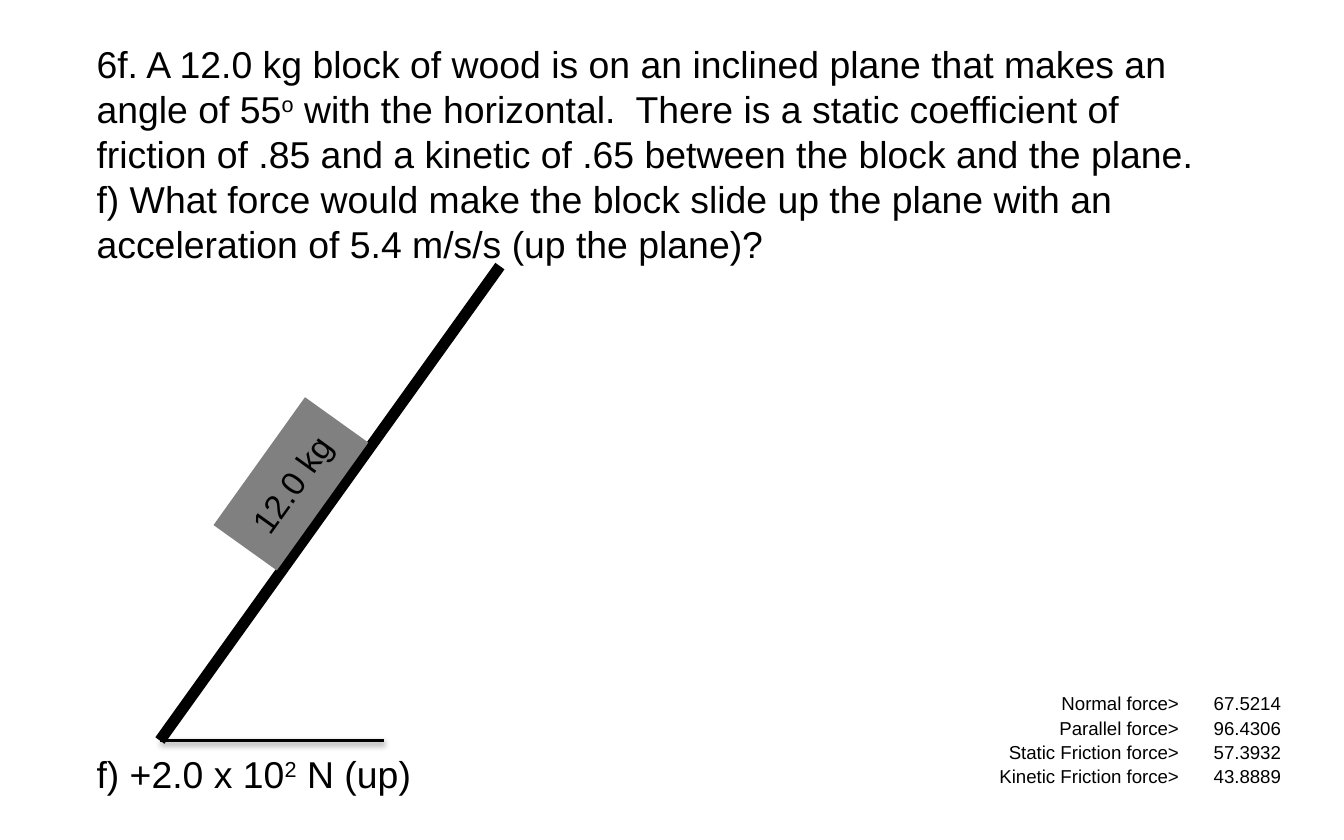
from dataclasses import dataclass

from lxml.etree import SubElement
from pptx import Presentation
from pptx.dml.color import RGBColor
from pptx.enum.shapes import MSO_CONNECTOR, MSO_SHAPE
from pptx.enum.text import MSO_ANCHOR, PP_ALIGN
from pptx.oxml.ns import qn
from pptx.util import Inches, Pt


@dataclass(frozen=True)
class Theme:
    """Colours, font and type sizes of the slide."""
    ink: RGBColor = RGBColor(0, 0, 0)
    wood: RGBColor = RGBColor(0x80, 0x80, 0x80)
    font: str = "Arial"
    body: int = 20
    label: int = 18
    small: int = 10


THEME = Theme()
PROBLEM = [
    ["6f. A 12.0 kg block of wood is on an inclined plane that makes an angle of 55",
     "o",
     " with the horizontal.  There is a static coefficient of friction of .85 "
     "and a kinetic of .65 between the block and the plane."],
    ["f) What force would make the block slide up the plane with an "
     "acceleration of 5.4 m/s/s (up the plane)?"],
]
ANSWER = [["f) +2.0 x 10", "2", " N (up)"]]
FORCES = [
    ("Normal force>", "67.5214"),
    ("Parallel force>", "96.4306"),
    ("Static Friction force>", "57.3932"),
    ("Kinetic Friction force>", "43.8889"),
]


def style(para, size, align=PP_ALIGN.LEFT):
    """Set the font and alignment of a paragraph."""
    para.alignment = align
    para.font.name = THEME.font
    para.font.size = Pt(size)
    para.font.color.rgb = THEME.ink


def add_text(slide, box, paras, wrap):
    """Write paragraphs in a box, raising every second run."""
    frame = slide.shapes.add_textbox(*map(Inches, box)).text_frame
    frame.word_wrap = wrap
    for row, parts in enumerate(paras):
        para = frame.add_paragraph() if row else frame.paragraphs[0]
        style(para, THEME.body)
        for col, part in enumerate(parts):
            run = para.add_run()
            run.text = part
            if col % 2:
                run.font._element.set("baseline", "30000")


def add_line(slide, start, end, width):
    """Draw a black line and return its effect list."""
    line = slide.shapes.add_connector(
        MSO_CONNECTOR.STRAIGHT, *map(Inches, (*start, *end)))
    line.line.color.rgb = THEME.ink
    line.line.width = Pt(width)
    return SubElement(line._element.spPr, qn("a:effectLst"))


def add_shade(effects):
    """Add a soft shadow below a line."""
    shade = SubElement(effects, qn("a:outerShdw"), blurRad=str(Pt(3.1)),
                       dist=str(Pt(1.6)), dir="5400000", rotWithShape="0")
    color = SubElement(shade, qn("a:srgbClr"), val=str(THEME.ink))
    SubElement(color, qn("a:alpha"), val="38000")


def add_ramp(slide, box):
    """Draw the inclined plane, its block and the ground."""
    left, top, width, height = box
    foot = (left, top + height)
    add_line(slide, foot, (left + width, top), 6)
    block = slide.shapes.add_shape(
        MSO_SHAPE.RECTANGLE, Inches(left + 0.39), Inches(top + 1.33),
        Inches(1.17), Inches(0.58))
    block.rotation = 305.6
    block.shadow.inherit = False
    block.fill.solid()
    block.fill.fore_color.rgb = THEME.wood
    block.line.fill.background()
    frame = block.text_frame
    frame.word_wrap = False
    frame.vertical_anchor = MSO_ANCHOR.MIDDLE
    frame.text = "12.0 kg"
    style(frame.paragraphs[0], THEME.label, PP_ALIGN.CENTER)
    add_shade(add_line(slide, foot, (left + 1.67, top + height), 2))


def add_forces(slide, box):
    """Fill a plain table with the forces."""
    table = slide.shapes.add_table(len(FORCES), 2, *map(Inches, box)).table
    table.first_row = table.horz_banding = False
    table.columns[0].width = Inches(2.38)
    table.columns[1].width = Inches(box[2] - 2.38)
    for row, texts in enumerate(FORCES):
        for col, text in enumerate(texts):
            cell = table.cell(row, col)
            cell.fill.background()
            cell.vertical_anchor = MSO_ANCHOR.BOTTOM
            cell.margin_left = cell.margin_right = cell.margin_top = Inches(0.01)
            cell.margin_bottom = 0
            cell.text = text
            style(cell.text_frame.paragraphs[0], THEME.small, PP_ALIGN.RIGHT)


def main():
    """Build and save the slide."""
    deck = Presentation()
    deck.slide_width, deck.slide_height = Inches(10), Inches(6.25)
    slide = deck.slides.add_slide(deck.slide_layouts[6])
    add_text(slide, (0.62, 0.26, 8.65, 1.78), PROBLEM, True)
    add_text(slide, (0.62, 5.54, 2.57, 0.44), ANSWER, False)
    add_forces(slide, (6.4, 5.14, 3.14, 0.72))
    add_ramp(slide, (1.19, 1.98, 2.53, 3.53))
    deck.save("out.pptx")


if __name__ == "__main__":
    main()
